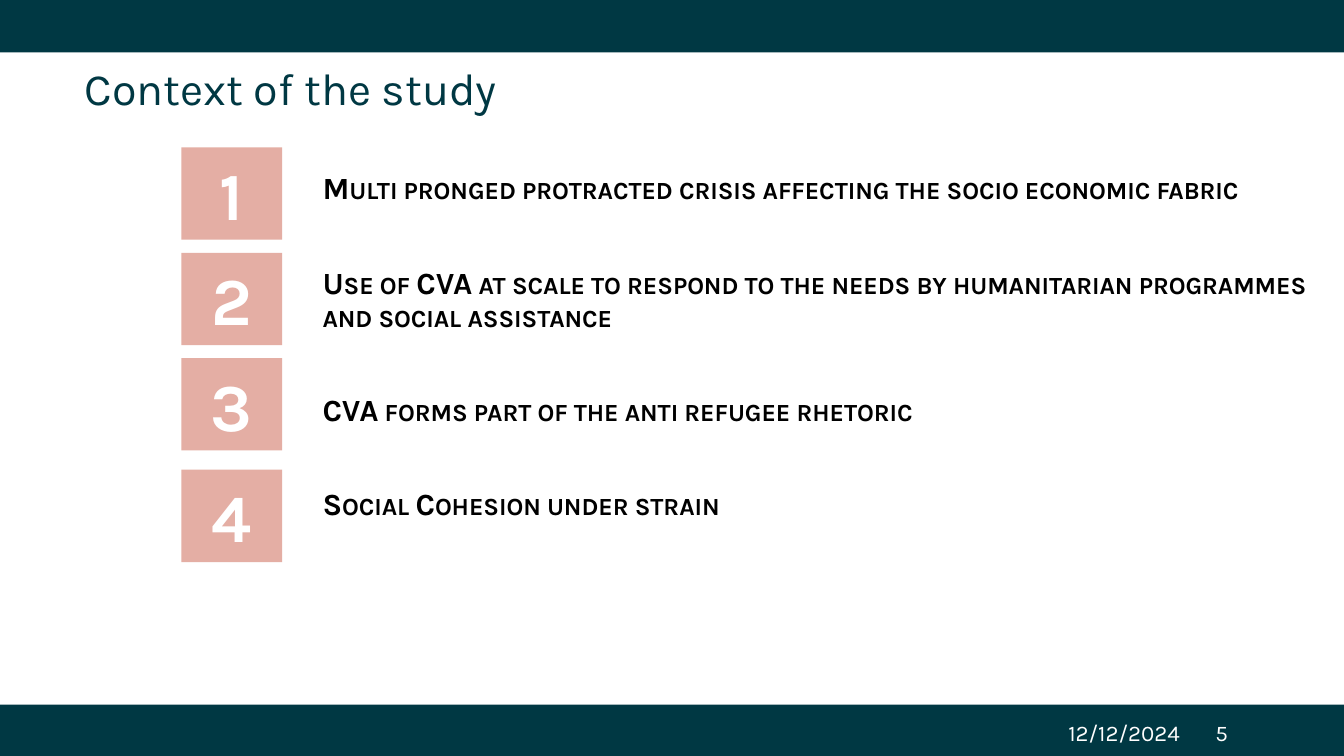
import pptx
import pptx.dml.color
import pptx.enum.shapes
import pptx.enum.text
import pptx.oxml.ns
import pptx.util
from lxml import etree

Pt = pptx.util.Pt
ALIGN = pptx.enum.text.PP_ALIGN
ANCHOR = pptx.enum.text.MSO_ANCHOR

THEME = {
    "font": "Karla",
    "teal": pptx.dml.color.RGBColor.from_string("003843"),
    "rose": pptx.dml.color.RGBColor.from_string("E4AEA4"),
    "white": pptx.dml.color.RGBColor.from_string("FFFFFF"),
    "black": pptx.dml.color.RGBColor.from_string("000000"),
    "title": Pt(32),
    "list": Pt(22),
    "number": Pt(48),
    "footer": Pt(16),
}


def write(box, text, size, color, bold=False, small_caps=False, align=ALIGN.LEFT,
          anchor=ANCHOR.TOP, line=1.0, before=0):
    """Add one paragraph to a shape, filling its empty first paragraph if there is one."""
    frame = box.text_frame
    frame.word_wrap = True
    frame.auto_size = pptx.enum.text.MSO_AUTO_SIZE.NONE
    frame.vertical_anchor = anchor
    para = frame.add_paragraph() if frame.text else frame.paragraphs[0]
    para.alignment = align
    para.line_spacing = line
    para.space_before = Pt(before)
    properties = para._p.get_or_add_pPr()
    properties.set("marL", "0")
    properties.set("indent", "0")
    etree.SubElement(properties, pptx.oxml.ns.qn("a:buNone"))
    span = para.add_run()
    span.text = text
    span.font.name = THEME["font"]
    span.font.size = THEME[size]
    span.font.color.rgb = THEME[color]
    span.font.bold = bold
    if small_caps:
        span.font._element.set("cap", "small")


def add_block(page, left, top, width, height, color):
    """Draw a flat filled rectangle."""
    block = page.shapes.add_shape(pptx.enum.shapes.MSO_SHAPE.RECTANGLE,
                                  Pt(left), Pt(top), Pt(width), Pt(height))
    block.fill.solid()
    block.fill.fore_color.rgb = THEME[color]
    block.line.fill.background()
    block.shadow.inherit = False
    return block


deck = pptx.Presentation()
deck.slide_width, deck.slide_height = Pt(960), Pt(540)
page = deck.slides.add_slide(deck.slide_layouts[1])

# Bands along the top and bottom edges
for top, height in ((0, 37.4), (503.3, 36.7)):
    add_block(page, 0, top, 960, height, "teal")

# Title
title = page.shapes.title
title.left, title.top, title.width, title.height = Pt(53.3), Pt(43.9), Pt(851), Pt(52.6)
write(title, "Context of the study", size="title", color="teal", line=0.9)

# Date and page number
for left, width, text in ((756, 105, "12/12/2024"), (861, 43, "5")):
    box = page.shapes.add_textbox(Pt(left), Pt(509.8), Pt(width), Pt(28.8))
    write(box, text, size="footer", color="white")

# List of context points
points = page.placeholders[1]
points.left, points.top, points.width, points.height = Pt(223.2), Pt(120.2), Pt(720), Pt(319)
for index, text in enumerate((
    "Multi pronged protracted crisis affecting the socio economic fabric",
    "Use of CVA at scale to respond to the needs by humanitarian programmes and social assistance",
    "CVA forms part of the anti refugee rhetoric",
    "Social Cohesion under strain",
)):
    write(points, text, size="list", color="black", bold=True, small_caps=True,
          line=0.9, before=43.5 if index else 0)

# Numbered squares
for number, top in enumerate((105.3, 180.6, 255.8, 335.5), start=1):
    square = add_block(page, 129.6, top, 72, 66, "rose")
    write(square, str(number), size="number", color="white", bold=True,
          align=ALIGN.CENTER, anchor=ANCHOR.MIDDLE)

deck.save("out.pptx")
